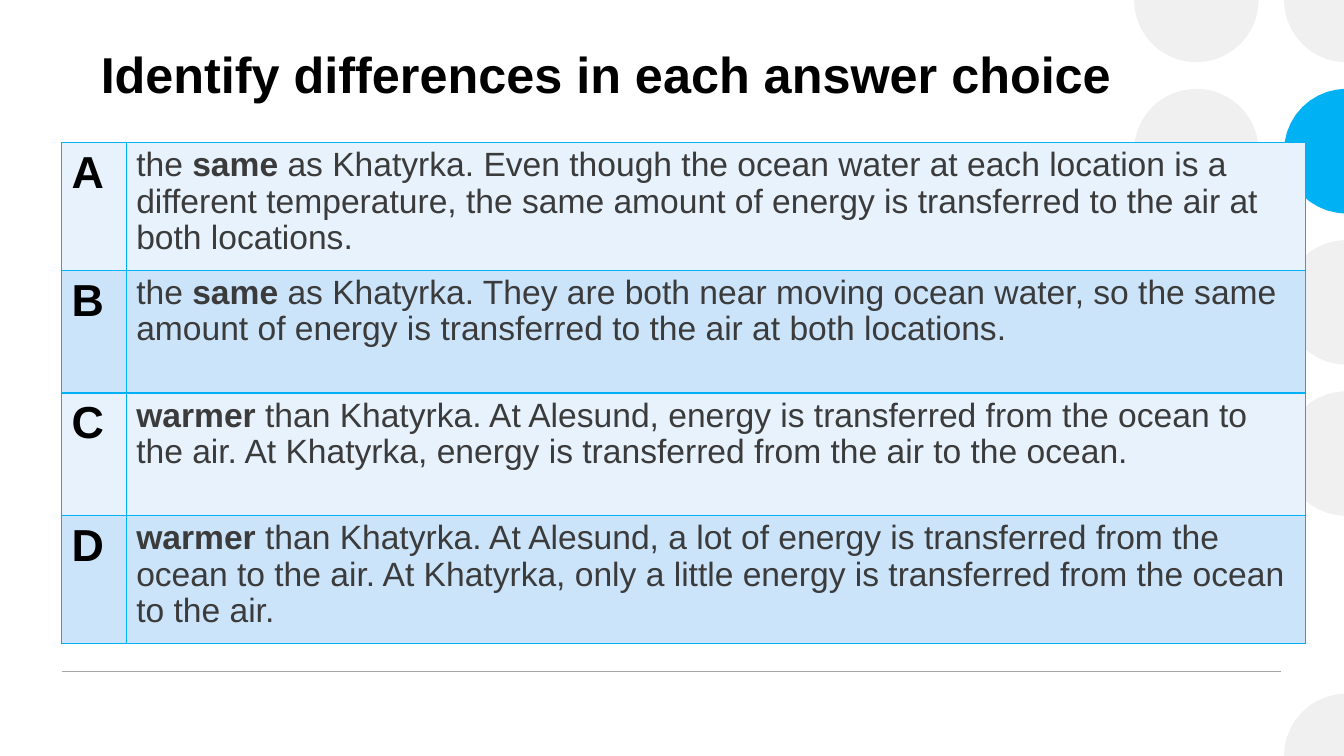
"""Build a slide that compares four answer choices in a table."""
import math
from dataclasses import dataclass

import pptx
import pptx.dml.color
import pptx.enum.shapes
import pptx.enum.text
import pptx.oxml
import pptx.oxml.ns
import pptx.util
from pptx.dml.color import RGBColor
from pptx.util import Cm

BLACK = RGBColor(0x00, 0x00, 0x00)
BODY_GREY = RGBColor(0x3B, 0x3B, 0x3B)
RULE_GREY = RGBColor(0xA6, 0xA6, 0xA6)
DOT_GREY = RGBColor(0xEF, 0xF0, 0xEF)
ACCENT_BLUE = RGBColor(0x00, 0xB2, 0xF3)
ROW_TINTS = (RGBColor(0xE7, 0xF2, 0xFD), RGBColor(0xCC, 0xE4, 0xFA))

FONT = "Arial"
SLIDE_WIDTH, SLIDE_HEIGHT = 33.87, 19.05
DOT_RADIUS, DOT_PITCH = 1.57, 3.81
DOT_COLUMNS = (30.15, 33.93)
ARC_STEP = 9


@dataclass(frozen=True)
class Dot:
    """A background circle at a grid position, visible between two angles."""

    column: int
    row: int
    start: int
    end: int
    color: RGBColor = DOT_GREY


@dataclass(frozen=True)
class Choice:
    """An answer choice, split around its bold key word."""

    letter: str
    lead: str
    key: str
    rest: str


DOTS = (
    Dot(0, 1, 0, 360),
    Dot(0, 0, 0, 180),
    Dot(1, 5, 180, 270),
    Dot(1, 3, 90, 270),
    Dot(1, 2, 90, 270),
    Dot(1, 1, 90, 270, ACCENT_BLUE),
    Dot(1, 0, 90, 180),
)

CHOICES = (
    Choice("A", "the ", "same",
           " as Khatyrka. Even though the ocean water at each location is a different "
           "temperature, the same amount of energy is transferred to the air at both locations."),
    Choice("B", "the ", "same",
           " as Khatyrka. They are both near moving ocean water, so the same amount of "
           "energy is transferred to the air at both locations."),
    Choice("C", "", "warmer",
           " than Khatyrka. At Alesund, energy is transferred from the ocean to the air. "
           "At Khatyrka, energy is transferred from the air to the ocean."),
    Choice("D", "", "warmer",
           " than Khatyrka. At Alesund, a lot of energy is transferred from the ocean to "
           "the air. At Khatyrka, only a little energy is transferred from the ocean to the air."),
)


def add_run(paragraph, text: str, size: float, color: RGBColor, bold: bool) -> None:
    """Append one formatted run."""
    run = paragraph.add_run()
    run.text = text
    run.font.name = FONT
    run.font.size = pptx.util.Pt(size)
    run.font.bold = bold
    run.font.color.rgb = color


def on_slide(x: float, y: float) -> tuple[int, int]:
    """Return the nearest point within the slide."""
    return Cm(min(max(x, 0), SLIDE_WIDTH)), Cm(min(max(y, 0), SLIDE_HEIGHT))


def add_dot(slide, dot: Dot) -> None:
    """Draw a circle, or the sector of it that lies on the slide."""
    x, y = DOT_COLUMNS[dot.column], dot.row * DOT_PITCH
    if dot.end - dot.start == 360:
        circle = slide.shapes.add_shape(
            pptx.enum.shapes.MSO_SHAPE.OVAL, Cm(x - DOT_RADIUS), Cm(y - DOT_RADIUS),
            Cm(2 * DOT_RADIUS), Cm(2 * DOT_RADIUS))
    else:
        angles = map(math.radians, range(dot.start, dot.end + 1, ARC_STEP))
        arc = [on_slide(x + DOT_RADIUS * math.cos(angle), y + DOT_RADIUS * math.sin(angle))
               for angle in angles]
        builder = slide.shapes.build_freeform(*on_slide(x, y))
        builder.add_line_segments(arc, close=True)
        circle = builder.convert_to_shape()
    circle.shadow.inherit = False
    circle.fill.solid()
    circle.fill.fore_color.rgb = dot.color
    circle.line.fill.background()


def add_footer_rule(slide) -> None:
    """Draw the thin rule under the table."""
    rule = slide.shapes.add_connector(
        pptx.enum.shapes.MSO_CONNECTOR.STRAIGHT, Cm(1.57), Cm(16.92), Cm(32.28), Cm(16.92))
    rule.line.color.rgb = RULE_GREY
    rule.line.width = pptx.util.Pt(1)
    rule._element.spPr.append(pptx.oxml.parse_xml(
        f"<a:effectLst {pptx.oxml.ns.nsdecls('a')}/>"))


def add_title(slide, text: str) -> None:
    """Add the slide heading."""
    heading = slide.shapes.add_textbox(Cm(2.29), Cm(0.81), Cm(27.64), Cm(3.53)).text_frame
    heading.word_wrap = True
    heading.vertical_anchor = pptx.enum.text.MSO_ANCHOR.TOP
    heading.margin_top = Cm(0.28)
    add_run(heading.paragraphs[0], text, 36, BLACK, True)


def style_cell(cell, tint: RGBColor) -> None:
    """Give a cell its borders and fill."""
    properties = cell._tc.get_or_add_tcPr()
    for side in ("lnL", "lnR", "lnT", "lnB"):
        properties.append(pptx.oxml.parse_xml(
            f'<a:{side} {pptx.oxml.ns.nsdecls("a")} w="12700"><a:solidFill>'
            f'<a:srgbClr val="{ACCENT_BLUE}"/></a:solidFill></a:{side}>'))
    cell.fill.solid()
    cell.fill.fore_color.rgb = tint


def add_choices(slide, choices: tuple[Choice, ...]) -> None:
    """Add the table of answer choices."""
    row_height = 3.09
    table = slide.shapes.add_table(
        len(choices), 2, Cm(1.55), Cm(3.6), Cm(31.35), Cm(row_height * len(choices))).table
    table.first_row = False
    table.horz_banding = False
    table.columns[0].width = Cm(1.63)
    table.columns[1].width = Cm(29.72)
    for index, choice in enumerate(choices):
        table.rows[index].height = Cm(row_height)
        letter_cell, answer_cell = table.cell(index, 0), table.cell(index, 1)
        for cell in (letter_cell, answer_cell):
            style_cell(cell, ROW_TINTS[index % 2])
        add_run(letter_cell.text_frame.paragraphs[0], choice.letter, 32, BLACK, True)
        answer = answer_cell.text_frame.paragraphs[0]
        answer.line_spacing = 0.97
        for text, bold in ((choice.lead, False), (choice.key, True), (choice.rest, False)):
            if text:
                add_run(answer, text, 24, BODY_GREY, bold)


def main() -> None:
    """Assemble and save the slide."""
    deck = pptx.Presentation()
    deck.slide_width, deck.slide_height = Cm(SLIDE_WIDTH), Cm(SLIDE_HEIGHT)
    slide = deck.slides.add_slide(deck.slide_layouts[6])
    for dot in DOTS:
        add_dot(slide, dot)
    add_footer_rule(slide)
    add_title(slide, "Identify differences in each answer choice")
    add_choices(slide, CHOICES)
    deck.save("out.pptx")


if __name__ == "__main__":
    main()
